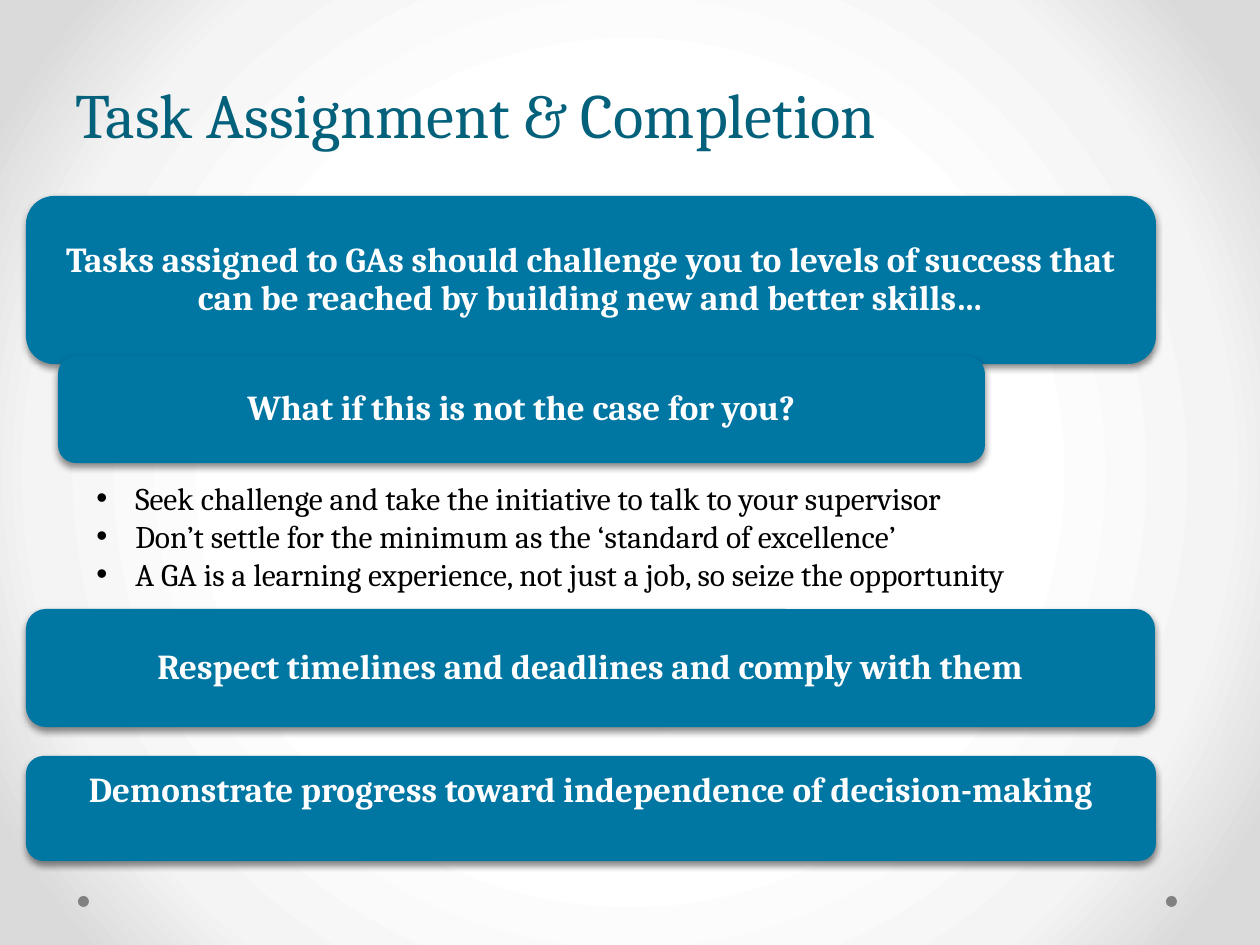
from pptx import Presentation
from pptx.dml.color import RGBColor
from pptx.enum.shapes import MSO_SHAPE
from pptx.enum.text import MSO_ANCHOR, PP_ALIGN
from pptx.oxml import parse_xml
from pptx.oxml.ns import nsdecls, qn
from pptx.util import Emu, Pt

PX = 914400 / 126
FONT = "Cambria"
BLUE = RGBColor(0x00, 0x76, 0xA3)
TEAL = RGBColor(0x04, 0x61, 0x7B)
GRAY = RGBColor(0x80, 0x80, 0x80)
WHITE = RGBColor(0xFF, 0xFF, 0xFF)
BLACK = RGBColor(0x00, 0x00, 0x00)

# left, top, width, height, text, anchor, line spacing, inset
PANELS = [
    (26, 196, 1130, 168, "Tasks assigned to GAs should challenge you to levels of success "
     "that can be reached by building new and better skills…", MSO_ANCHOR.MIDDLE, 0.9, 10),
    (58, 356, 927, 107, "What if this is not the case for you?", MSO_ANCHOR.MIDDLE, 0.9, 10),
    (26, 609, 1129, 118, "Respect timelines and deadlines and comply with them",
     MSO_ANCHOR.MIDDLE, 0.9, 10),
    (26, 756, 1130, 105, "Demonstrate progress toward independence of decision-making",
     MSO_ANCHOR.TOP, 1.0, 6),
]
ADVICE = [
    "Seek challenge and take the initiative to talk to your supervisor",
    "Don’t settle for the minimum as the ‘standard of excellence’",
    "A GA is a learning experience, not just a job, so seize the opportunity",
]


def px(length):
    return Emu(round(length * PX))


def place(box):
    return [px(length) for length in box]


def add_run(paragraph, text, size, color, bold=False):
    run = paragraph.add_run()
    run.text = text
    run.font.name = FONT
    run.font.size = Pt(size)
    run.font.bold = bold
    run.font.color.rgb = color


def paint_background(slide):
    slide.background.fill.solid()
    properties = slide.element.find(".//" + qn("p:bgPr"))
    stops = "".join(
        f'<a:gs pos="{position}000"><a:srgbClr val="{color}"/></a:gs>'
        for position, color in ((50, "FFFFFF"), (76, "F4F4F4"), (92, "DADADA")))
    gradient = parse_xml(
        f'<a:gradFill {nsdecls("a")} rotWithShape="1"><a:gsLst>{stops}</a:gsLst>'
        '<a:path path="circle"><a:fillToRect l="50000" t="50000" r="50000" b="50000"/>'
        '</a:path></a:gradFill>')
    properties.replace(properties[0], gradient)


def add_filled_shape(slide, kind, box, color):
    shape = slide.shapes.add_shape(kind, *place(box))
    shape.shadow.inherit = False
    shape.fill.solid()
    shape.fill.fore_color.rgb = color
    shape.line.fill.background()
    return shape


def add_title(slide, box):
    frame = slide.shapes.add_textbox(*place(box)).text_frame
    frame.word_wrap = True
    frame.vertical_anchor = MSO_ANCHOR.BOTTOM
    paragraph = frame.paragraphs[0]
    paragraph.line_spacing = Pt(58)
    add_run(paragraph, "Task Assignment & Completion", 36, TEAL)


def add_panel(slide, box, text, anchor, spacing, inset):
    shape = add_filled_shape(slide, MSO_SHAPE.ROUNDED_RECTANGLE, box, BLUE)
    # Soft shadow falling straight down
    effects = shape.element.spPr.find(qn("a:effectLst"))
    effects.append(parse_xml(
        f'<a:outerShdw {nsdecls("a")} blurRad="{Pt(4)}" dist="{Pt(2)}" dir="5400000" '
        'rotWithShape="0"><a:srgbClr val="000000"><a:alpha val="45000"/></a:srgbClr>'
        '</a:outerShdw>'))
    frame = shape.text_frame
    frame.word_wrap = True
    frame.vertical_anchor = anchor
    frame.margin_left = frame.margin_right = px(10)
    frame.margin_top = frame.margin_bottom = px(inset)
    paragraph = frame.paragraphs[0]
    paragraph.alignment = PP_ALIGN.CENTER
    paragraph.line_spacing = spacing
    add_run(paragraph, text, 20, WHITE, bold=True)


def add_bullets(slide, box, items):
    frame = slide.shapes.add_textbox(*place(box)).text_frame
    frame.word_wrap = True
    for index, item in enumerate(items):
        paragraph = frame.add_paragraph() if index else frame.paragraphs[0]
        properties = paragraph._p.get_or_add_pPr()
        properties.set("marL", str(px(39)))
        properties.set("indent", str(-px(39)))
        properties.append(parse_xml(f'<a:buFont {nsdecls("a")} typeface="Arial"/>'))
        properties.append(parse_xml(f'<a:buChar {nsdecls("a")} char="•"/>'))
        add_run(paragraph, item, 18, BLACK)


def main():
    presentation = Presentation()
    presentation.slide_width, presentation.slide_height = px(1260), px(945)
    slide = presentation.slides.add_slide(presentation.slide_layouts[6])
    paint_background(slide)

    # Footer dots
    for left in (1166, 78):
        add_filled_shape(slide, MSO_SHAPE.OVAL, (left, 896, 11, 11), GRAY)

    add_title(slide, (63, 0, 1134, 157))

    # Statements, then the advice between them
    for *box, text, anchor, spacing, inset in PANELS:
        add_panel(slide, box, text, anchor, spacing, inset)
    add_bullets(slide, (84, 473, 1061, 127), ADVICE)

    presentation.save("out.pptx")


if __name__ == "__main__":
    main()
